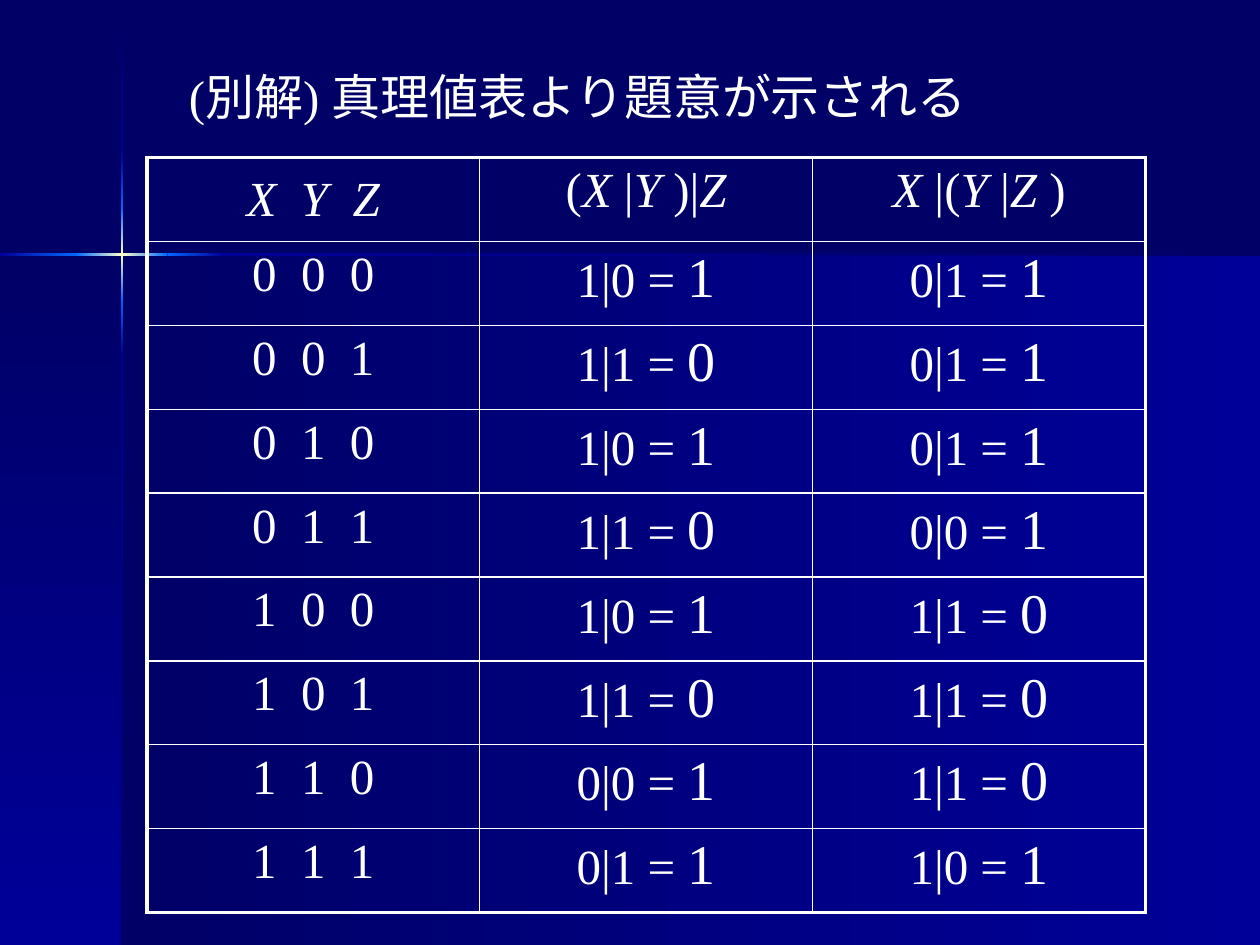
from itertools import pairwise, product

from lxml import etree
from pptx import Presentation
from pptx import util as u
from pptx.dml.color import RGBColor
from pptx.enum import shapes, text
from pptx.oxml import parse_xml

COLORS = {"night": "000066", "navy": "000099", "blue": "0066FF",
          "glow": "FFFFCC", "white": "FFFFFF"}
FONT = "Times New Roman"
NS = 'xmlns:a="http://schemas.openxmlformats.org/drawingml/2006/main"'
WHITE = RGBColor.from_string(COLORS["white"])

deck = Presentation()
deck.slide_width, deck.slide_height = u.Cm(25.4), u.Cm(19.05)
page = deck.slides.add_slide(deck.slide_layouts[6])
page.background.fill.solid()
page.background.fill.fore_color.rgb = RGBColor.from_string(COLORS["night"])


def add_gradient_bar(left, top, width, height, names, angle):
    """Add a borderless rectangle; angle runs clockwise from left-to-right."""
    bar = page.shapes.add_shape(shapes.MSO_SHAPE.RECTANGLE, u.Cm(left),
                                u.Cm(top), u.Cm(width), u.Cm(height))
    bar.shadow.inherit = False
    bar.line.fill.background()
    bar.fill.background()
    stops = "".join(
        f'<a:gs pos="{100000 * i // (len(names) - 1)}"><a:srgbClr val="{COLORS[name]}"/></a:gs>'
        for i, name in enumerate(names))
    gradient = parse_xml(f'<a:gradFill {NS} rotWithShape="1"><a:gsLst>{stops}</a:gsLst>'
                         f'<a:lin ang="{angle * 60000}" scaled="0"/></a:gradFill>')
    properties = bar.fill._xPr
    properties.replace(properties.find("{*}noFill"), gradient)


# Background panels and the glowing cross between them
CROSS_X, CROSS_Y, THICK = 2.44, 5.11, 0.05
add_gradient_bar(2.46, 5.13, 22.94, 13.92, ("night", "navy"), 0)
add_gradient_bar(0, 5.13, 2.46, 13.92, ("night", "navy"), 90)
RAYS = [("night", "navy"), ("navy", "blue"), ("blue", "glow", "blue"),
        ("blue", "navy"), ("navy", "night")]
for (start, end), names in zip(pairwise((0.03, 3.07, 4.19, 6.05, 7.16, 19.05)), RAYS):
    add_gradient_bar(CROSS_X, start, THICK, end - start, names, 90)
for (start, end), names in zip(pairwise((0, 1.53, 3.38, 4.5, 25.4)), RAYS[1:]):
    add_gradient_bar(start, CROSS_Y, end - start, THICK, names, 0)


def add_spans(para, spans):
    """Fill a paragraph with (text, size, italic) spans."""
    para.font.name = FONT
    para.font.color.rgb = WHITE
    for words, size, italic in spans:
        span = para.add_run()
        span.text = words
        span.font.name = FONT
        span.font.size = u.Pt(size)
        span.font.italic = italic
        span.font.color.rgb = WHITE


# Truth table, worked out with the Sheffer stroke
rows = [[[("X  Y  Z", 28, True)],
         [(part, 28, part in "XYZ") for part in ("(", "X", " |", "Y", " )|", "Z")],
         [(part, 28, part in "XYZ") for part in ("X", " |(", "Y", " |", "Z", " )")]]]
for x, y, z in product((0, 1), repeat=3):
    xy, yz = 1 - x * y, 1 - y * z
    rows.append([[(f"{x}  {y}  {z}", 28, False)],
                 [(f"{xy}|{z} = ", 28, False), (str(1 - xy * z), 32, False)],
                 [(f"{x}|{yz} = ", 28, False), (str(1 - x * yz), 32, False)]])

COLUMN, ROW = 6.71, 1.69
last_row, last_column = len(rows) - 1, 2
table = page.shapes.add_table(len(rows), 3, u.Cm(2.96), u.Cm(3.18),
                              u.Cm(3 * COLUMN), u.Cm(len(rows) * ROW)).table
table.first_row = table.horz_banding = False
for column in table.columns:
    column.width = u.Cm(COLUMN)
for r, row in enumerate(rows):
    table.rows[r].height = u.Cm(ROW)
    for c, spans in enumerate(row):
        cell = table.cell(r, c)
        cell.vertical_anchor = (text.MSO_ANCHOR.MIDDLE if r == c == 0
                                else text.MSO_ANCHOR.TOP)
        if r == 0:
            cell.fill.solid()
            cell.fill.fore_color.rgb = RGBColor.from_string(COLORS["night"])
        else:
            cell.fill.background()
        para = cell.text_frame.paragraphs[0]
        para.alignment = text.PP_ALIGN.CENTER
        add_spans(para, spans)
        outer = {"L": c == 0, "R": c == last_column, "T": r == 0, "B": r == last_row}
        for i, (side, thick) in enumerate(outer.items()):
            border = etree.fromstring(
                f'<a:ln{side} {NS} w="{u.Pt(2.25 if thick else 1)}"><a:solidFill>'
                f'<a:srgbClr val="{COLORS["white"]}"/></a:solidFill></a:ln{side}>')
            cell._tc.get_or_add_tcPr().insert(i, border)

box = page.shapes.add_textbox(u.Cm(3.56), u.Cm(1.22), u.Cm(18.03), u.Cm(1.45))
box.text_frame.word_wrap = True
add_spans(box.text_frame.paragraphs[0], [("(別解) 真理値表より題意が示される", 28, False)])

deck.save("out.pptx")
